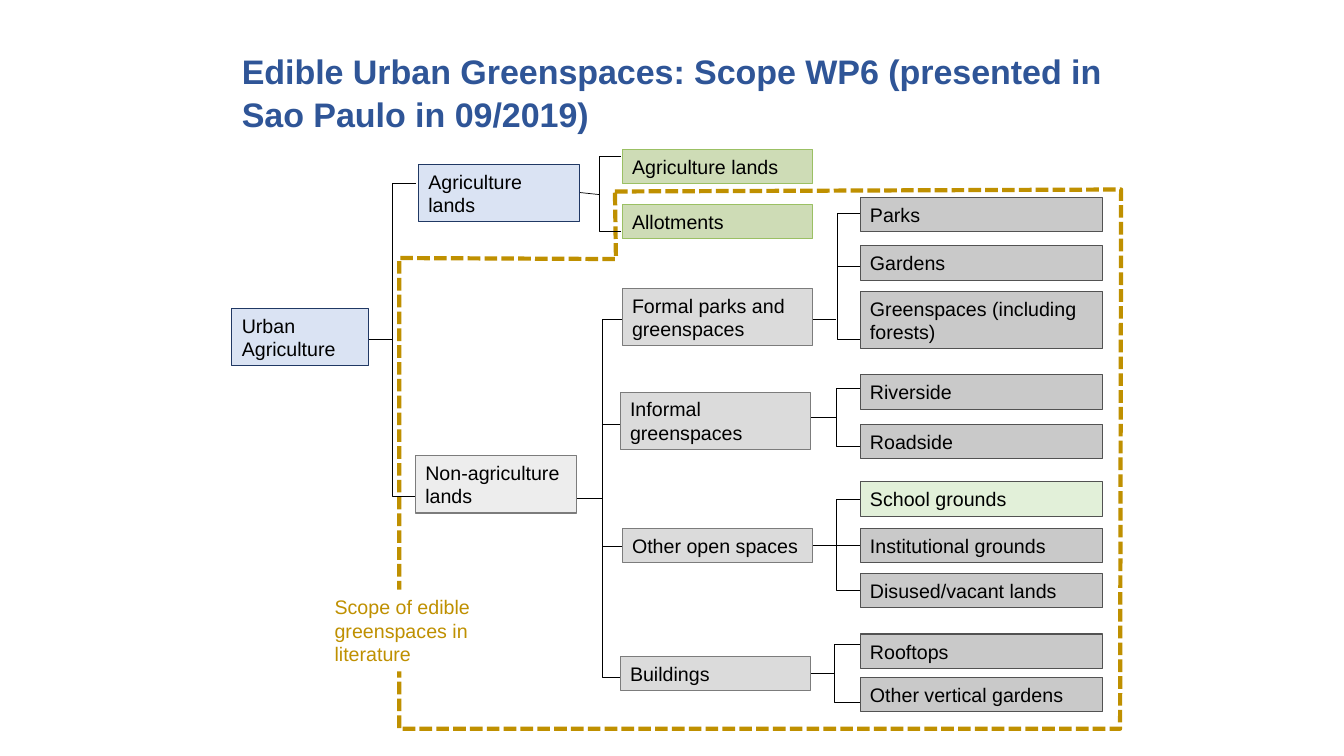
import pptx
import pptx.dml.color
import pptx.enum.shapes
import pptx.enum.text
import pptx.oxml
import pptx.util
from pptx.util import Inches

SHAPES = pptx.enum.shapes.MSO_SHAPE
ANCHORS = pptx.enum.text.MSO_ANCHOR
FONT = "Arial"
ONE_LINE, TWO_LINES = 0.34, 0.57


def color(hex_string):
    return pptx.dml.color.RGBColor.from_string(hex_string)


def add_box(text, left, top, width, height, fill, line, text_color="000000"):
    box = slide.shapes.add_shape(
        SHAPES.RECTANGLE, Inches(left), Inches(top), Inches(width), Inches(height))
    box.shadow.inherit = False
    box.fill.solid()
    box.fill.fore_color.rgb = color(fill)
    if line:
        box.line.color.rgb = color(line)
        box.line.width = pptx.util.Pt(0.75)
    else:
        box.line.fill.background()
    box.text_frame.word_wrap = True
    box.text_frame.vertical_anchor = ANCHORS.MIDDLE
    paragraph = box.text_frame.paragraphs[0]
    paragraph.alignment = pptx.enum.text.PP_ALIGN.LEFT
    run = paragraph.add_run()
    run.text = text
    run.font.name = FONT
    run.font.size = pptx.util.Pt(14)
    run.font.color.rgb = color(text_color)


presentation = pptx.Presentation()
presentation.slide_width = Inches(13.33)
presentation.slide_height = Inches(7.5)
slide = presentation.slides.add_slide(presentation.slide_layouts[6])

# Dashed border around the scope found in literature
scope_corners = [(11.12, 1.88), (11.11, 7.23), (3.96, 7.23), (3.96, 2.56), (6.11, 2.57)]
builder = slide.shapes.build_freeform(Inches(6.1), Inches(1.9), scale=1.0)
builder.add_line_segments([(Inches(x), Inches(y)) for x, y in scope_corners], close=True)
scope = builder.convert_to_shape()
scope.shadow.inherit = False
scope.fill.background()
scope.line.color.rgb = color("BF9000")
scope.line.width = pptx.util.Pt(3)
scope.line.dash_style = pptx.enum.dml.MSO_LINE.SQUARE_DOT

# Brackets that gather the children of each node: left, top, width, height
brackets = [
    (3.89, 1.82, 0.24, 3.1),
    (5.94, 1.55, 0.22, 0.75),
    (5.97, 3.17, 0.22, 3.55),
    (8.31, 2.12, 0.31, 1.25),
    (8.29, 3.85, 0.32, 0.58),
    (8.29, 4.95, 0.31, 0.91),
    (8.28, 6.39, 0.32, 0.58),
]
for left, top, width, height in brackets:
    bracket = slide.shapes.add_shape(
        SHAPES.LEFT_BRACKET, Inches(left), Inches(top), Inches(width), Inches(height))
    bracket.adjustments[0] = 0
    bracket.shadow.inherit = False
    bracket.fill.background()
    bracket.line.color.rgb = color("000000")
    bracket.line.width = pptx.util.Pt(0.5)

# Stems from parents to brackets, and branches to middle children: x1, y1, x2, y2
stems = [
    (3.89, 3.37, 3.61, 3.37),
    (5.94, 1.93, 5.75, 1.91),
    (5.97, 4.94, 5.71, 4.94),
    (5.97, 4.21, 6.23, 4.21),
    (5.98, 5.42, 6.24, 5.42),
    (8.29, 3.17, 7.91, 3.17),
    (8.69, 2.64, 8.31, 2.64),
    (8.29, 4.14, 7.91, 4.14),
    (8.53, 5.41, 8.06, 5.41),
    (8.28, 6.68, 7.9, 6.68),
]
for x1, y1, x2, y2 in stems:
    stem = slide.shapes.add_connector(
        pptx.enum.shapes.MSO_CONNECTOR.STRAIGHT,
        Inches(x1), Inches(y1), Inches(x2), Inches(y2))
    stem.line.color.rgb = color("000000")
    stem.line.width = pptx.util.Pt(0.5)
    properties = stem.element.spPr
    properties.append(pptx.oxml.parse_xml(
        '<a:effectLst xmlns:a="http://schemas.openxmlformats.org/drawingml/2006/main"/>'))

# Root and first level
add_box("Urban Agriculture", 2.3, 3.06, 1.36, TWO_LINES, "DAE3F3", "203864")
add_box("Agriculture lands", 4.15, 1.63, 1.6, TWO_LINES, "DAE3F3", "203864")
add_box("Non-agriculture lands", 4.12, 4.52, 1.6, TWO_LINES, "EDEDED", "7C7C7C")

# Second level
green, gray = ("CEDCB6", "9BC064"), ("DBDBDB", "7C7C7C")
categories = [
    ("Agriculture lands", 6.17, 1.48, ONE_LINE, green),
    ("Allotments", 6.17, 2.03, ONE_LINE, green),
    ("Formal parks and greenspaces", 6.17, 2.86, TWO_LINES, gray),
    ("Informal greenspaces", 6.15, 3.89, TWO_LINES, gray),
    ("Other open spaces", 6.17, 5.24, ONE_LINE, gray),
    ("Buildings", 6.15, 6.51, ONE_LINE, gray),
]
for text, left, top, height, (fill, line) in categories:
    add_box(text, left, top, 1.89, height, fill, line)

# Third level
places = [
    ("Parks", 1.96, ONE_LINE),
    ("Gardens", 2.44, ONE_LINE),
    ("Greenspaces (including forests)", 2.89, TWO_LINES),
    ("Riverside", 3.72, ONE_LINE),
    ("Roadside", 4.21, ONE_LINE),
    ("School grounds", 4.78, ONE_LINE),
    ("Institutional grounds", 5.24, ONE_LINE),
    ("Disused/vacant lands", 5.69, ONE_LINE),
    ("Rooftops", 6.29, ONE_LINE),
    ("Other vertical gardens", 6.72, ONE_LINE),
]
for text, top, height in places:
    fill = "E2F0D9" if text == "School grounds" else "C9C9C9"
    add_box(text, 8.53, top, 2.41, height, fill, "525252")

add_box("Scope of edible greenspaces in literature",
        3.22, 5.85, 2.25, 0.81, "FFFFFF", None, "BF9000")

# Title
title = slide.shapes.add_textbox(Inches(2.3), Inches(0.43), Inches(8.95), Inches(0.8))
title.text_frame.word_wrap = True
paragraph = title.text_frame.paragraphs[0]
paragraph.line_spacing = 1.05
run = paragraph.add_run()
run.text = "Edible Urban Greenspaces: Scope WP6 (presented in Sao Paulo in 09/2019)"
run.font.name = FONT
run.font.size = pptx.util.Pt(24.3)
run.font.bold = True
run.font.color.rgb = color("2F5597")

presentation.save("out.pptx")
